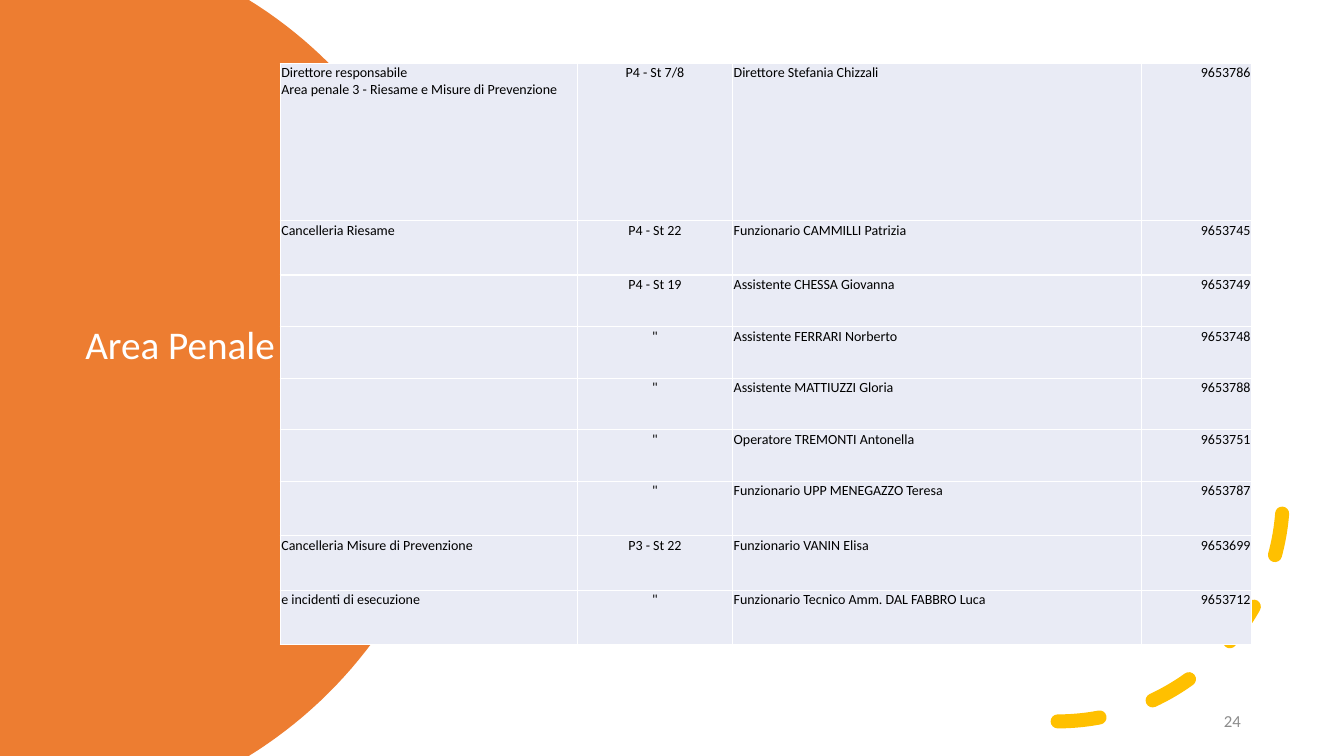
import math
from typing import NamedTuple

import pptx
import pptx.dml.color
import pptx.enum.shapes
import pptx.enum.text
import pptx.oxml
import pptx.oxml.ns
import pptx.util

Cm = pptx.util.Cm
Pt = pptx.util.Pt
Align = pptx.enum.text.PP_ALIGN
Anchor = pptx.enum.text.MSO_ANCHOR

FONT = "Calibri"
SLIDE_WIDTH, SLIDE_HEIGHT = 33.87, 19.05
DISC_CENTRE, DISC_RADIUS = 0.38, 11.2
ARC_STEPS = 80


class Box(NamedTuple):
    left: float
    top: float
    width: float
    height: float

    def lengths(self) -> list:
        return [Cm(value) for value in self]


class Contact(NamedTuple):
    office: str
    room: str
    person: str
    phone: str
    height: float


TITLE_BOX = Box(1.9, 3.2, 8.89, 12.4)
ARC_BOX = Box(20.98, 6.83, 11.35, 11.35)
NUMBER_BOX = Box(26.49, 17.65, 5.03, 1.02)
TABLE_BOX = Box(7.06, 1.6, 24.48, 14.64)

COLUMN_WIDTHS = (7.49, 3.91, 10.31, 2.77)
COLUMN_ALIGNMENTS = (Align.LEFT, Align.CENTER, Align.LEFT, Align.RIGHT)
CONTACTS = (
    Contact("Direttore responsabile\vArea penale 3 - Riesame e Misure di Prevenzione",
            "P4 - St 7/8", "Direttore Stefania Chizzali", "9653786", 3.96),
    Contact("Cancelleria Riesame", "P4 - St 22", "Funzionario CAMMILLI Patrizia", "9653745", 1.37),
    Contact("", "P4 - St 19", "Assistente CHESSA Giovanna", "9653749", 1.3),
    Contact("", '"', "Assistente FERRARI Norberto", "9653748", 1.3),
    Contact("", '"', "Assistente MATTIUZZI Gloria", "9653788", 1.3),
    Contact("", '"', "Operatore TREMONTI Antonella", "9653751", 1.3),
    Contact("", '"', "Funzionario UPP MENEGAZZO Teresa", "9653787", 1.37),
    Contact("Cancelleria Misure di Prevenzione", "P3 - St 22", "Funzionario VANIN Elisa",
            "9653699", 1.37),
    Contact("e incidenti di esecuzione", '"', "Funzionario Tecnico Amm. DAL FABBRO Luca",
            "9653712", 1.37),
)


def color(value: str) -> pptx.dml.color.RGBColor:
    return pptx.dml.color.RGBColor.from_string(value)


def write_text(frame, text: str, *, size: float, hex_color: str, align=Align.LEFT) -> None:
    paragraph = frame.paragraphs[0]
    paragraph.text = text
    paragraph.alignment = align
    paragraph.font.size = Pt(size)
    for run in paragraph.runs:
        run.font.name = FONT
        run.font.size = Pt(size)
        run.font.color.rgb = color(hex_color)


def add_text_box(slide, box: Box, text: str, *, bottom_inset: float = 0.13, **text_format) -> None:
    frame = slide.shapes.add_textbox(*box.lengths()).text_frame
    frame.word_wrap = True
    frame.vertical_anchor = Anchor.MIDDLE
    frame.margin_bottom = Cm(bottom_inset)
    write_text(frame, text, **text_format)


def add_orange_disc(slide) -> None:
    """Draw the disc cut off by the left, top and bottom edges of the slide."""
    middle = SLIDE_HEIGHT / 2
    half_angle = math.asin(middle / DISC_RADIUS)
    angles = [half_angle * (2 * step / ARC_STEPS - 1) for step in range(ARC_STEPS + 1)]
    rim = [(Cm(DISC_CENTRE + DISC_RADIUS * math.cos(angle)),
            Cm(middle + DISC_RADIUS * math.sin(angle))) for angle in angles]
    builder = slide.shapes.build_freeform(0, 0)
    builder.add_line_segments([*rim, (0, Cm(SLIDE_HEIGHT))], close=True)
    shape = builder.convert_to_shape()
    shape.shadow.inherit = False
    shape.fill.solid()
    shape.fill.fore_color.rgb = color("ED7D31")
    shape.line.fill.background()


def add_dashed_arc(slide) -> None:
    shape = slide.shapes.add_shape(pptx.enum.shapes.MSO_SHAPE.ARC, *ARC_BOX.lengths())
    shape.shadow.inherit = False
    shape.fill.background()
    shape.line.color.rgb = color("FFC000")
    shape.line.width = Pt(10)
    shape.line.dash_style = pptx.enum.dml.MSO_LINE.DASH
    shape.line._get_or_add_ln().set("cap", "rnd")
    shape._element.spPr.find(pptx.oxml.ns.qn("a:xfrm")).set("flipV", "1")


def set_borders(cell, hex_color: str) -> None:
    properties = cell._tc.get_or_add_tcPr()
    for position, side in enumerate(("lnL", "lnR", "lnT", "lnB")):
        properties.insert(position, pptx.oxml.parse_xml(
            f'<a:{side} {pptx.oxml.ns.nsdecls("a")} w="12700"><a:solidFill>'
            f'<a:srgbClr val="{hex_color}"/></a:solidFill></a:{side}>'))


def add_contact_table(slide) -> None:
    table = slide.shapes.add_table(
        len(CONTACTS), len(COLUMN_WIDTHS), *TABLE_BOX.lengths()).table
    table.first_row = False
    table.horz_banding = False
    for column, width in zip(table.columns, COLUMN_WIDTHS):
        column.width = Cm(width)
    for row, contact in zip(table.rows, CONTACTS):
        row.height = Cm(contact.height)
        for cell, text, align in zip(row.cells, contact[:4], COLUMN_ALIGNMENTS):
            cell.margin_left = cell.margin_right = cell.margin_top = Cm(0.03)
            cell.margin_bottom = 0
            cell.fill.solid()
            cell.fill.fore_color.rgb = color("E9EBF5")
            set_borders(cell, "FFFFFF")
            write_text(cell.text_frame, text, size=10, hex_color="000000", align=align)


def main() -> None:
    presentation = pptx.Presentation()
    presentation.slide_width = Cm(SLIDE_WIDTH)
    presentation.slide_height = Cm(SLIDE_HEIGHT)
    slide = presentation.slides.add_slide(presentation.slide_layouts[6])
    add_orange_disc(slide)
    add_text_box(slide, TITLE_BOX, "Area Penale", bottom_inset=1.6, size=28, hex_color="FFFFFF")
    add_dashed_arc(slide)
    add_text_box(slide, NUMBER_BOX, "24", size=12, hex_color="8C8C8C", align=Align.RIGHT)
    add_contact_table(slide)
    presentation.save("out.pptx")


if __name__ == "__main__":
    main()
